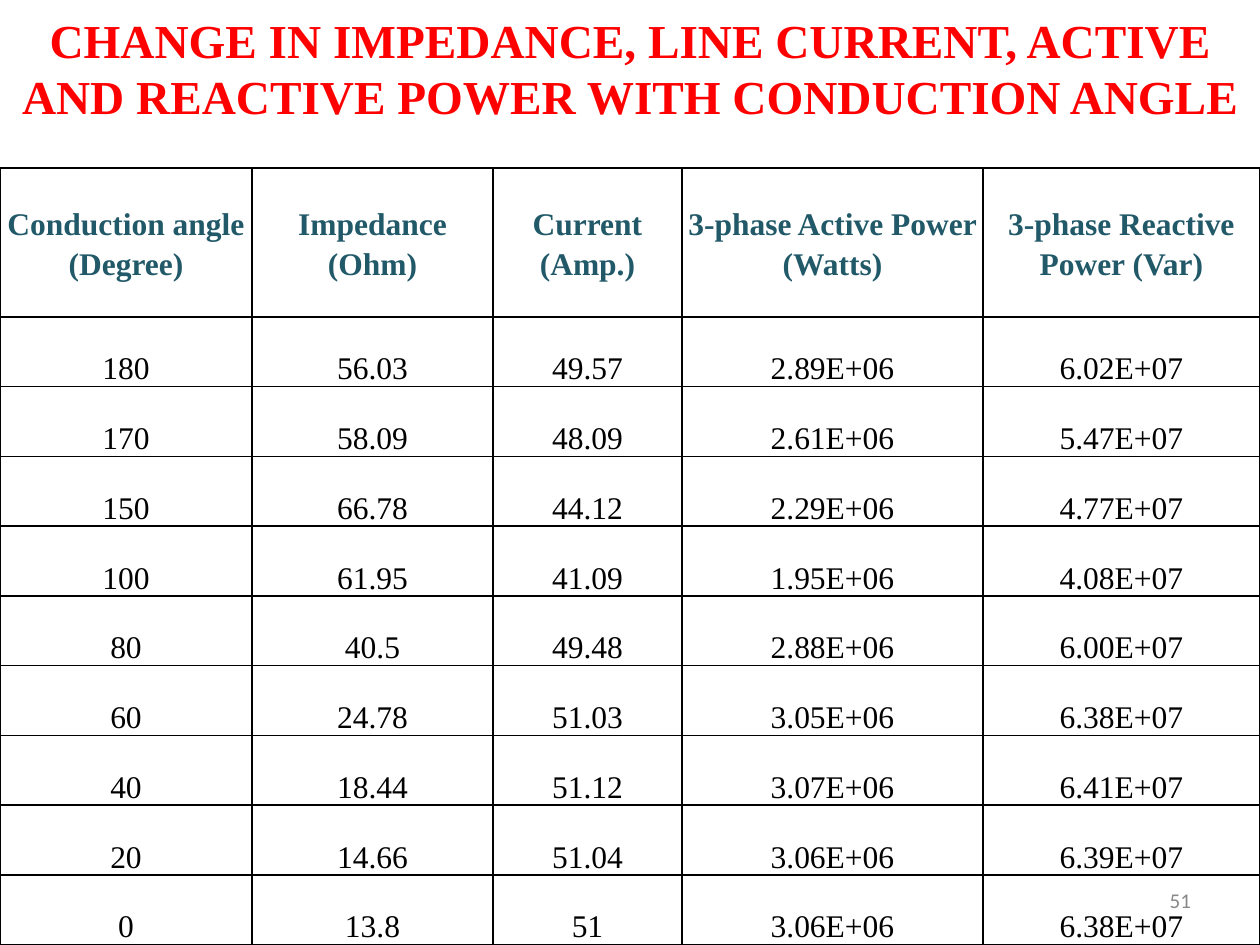
"""Build a slide tabulating impedance, current and power against conduction angle."""
from lxml import etree
from pptx import Presentation
from pptx.dml.color import RGBColor
from pptx.enum.text import MSO_ANCHOR, MSO_AUTO_SIZE, PP_ALIGN
from pptx.oxml.ns import qn
from pptx.util import Pt

CENTER, RIGHT = PP_ALIGN.CENTER, PP_ALIGN.RIGHT
MIDDLE, BOTTOM = MSO_ANCHOR.MIDDLE, MSO_ANCHOR.BOTTOM
NO_AUTOFIT, GROW = MSO_AUTO_SIZE.NONE, MSO_AUTO_SIZE.SHAPE_TO_FIT_TEXT

TITLE = "CHANGE IN IMPEDANCE, LINE CURRENT, ACTIVE AND REACTIVE POWER WITH CONDUCTION ANGLE"
PAGE_NUMBER = "51"
HEADERS = [
    "Conduction angle (Degree)",
    "Impedance (Ohm)",
    "Current (Amp.)",
    "3-phase Active Power (Watts)",
    "3-phase Reactive Power (Var)",
]
READINGS = [
    ("180", "56.03", "49.57", "2.89E+06", "6.02E+07"),
    ("170", "58.09", "48.09", "2.61E+06", "5.47E+07"),
    ("150", "66.78", "44.12", "2.29E+06", "4.77E+07"),
    ("100", "61.95", "41.09", "1.95E+06", "4.08E+07"),
    ("80", "40.5", "49.48", "2.88E+06", "6.00E+07"),
    ("60", "24.78", "51.03", "3.05E+06", "6.38E+07"),
    ("40", "18.44", "51.12", "3.07E+06", "6.41E+07"),
    ("20", "14.66", "51.04", "3.06E+06", "6.39E+07"),
    ("0", "13.8", "51", "3.06E+06", "6.38E+07"),
]
COLORS = {"title": "FF0000", "header": "215968", "body": "000000",
          "border": "000000", "page": "888888"}
SERIF, SANS = "Times New Roman", "Calibri"

SLIDE_WIDTH, SLIDE_HEIGHT = 1260, 945
TABLE_TOP = 168
COLUMN_WIDTHS = [252, 241, 189, 301, 277]
HEADER_HEIGHT = 149
INSET = 6


def px(length):
    return round(length * 914400 / 126)


def write(frame, text, size, color, font=SERIF, bold=False, align=CENTER, spacing=None):
    paragraph = frame.paragraphs[0]
    paragraph.alignment = align
    if spacing:
        paragraph.line_spacing = spacing
    run = paragraph.add_run()
    run.text = text
    run.font.size = Pt(size)
    run.font.name = font
    run.font.bold = bold
    run.font.color.rgb = RGBColor.from_string(COLORS[color])


def set_insets(target, inset):
    target.margin_left = target.margin_right = px(inset)
    target.margin_top = target.margin_bottom = px(inset)


def add_borders(cell):
    properties = cell._tc.get_or_add_tcPr()
    for side in ("lnL", "lnR", "lnT", "lnB"):
        line = etree.SubElement(properties, qn(f"a:{side}"), w=str(Pt(1)))
        fill = etree.SubElement(line, qn("a:solidFill"))
        etree.SubElement(fill, qn("a:srgbClr"), val=COLORS["border"])


def add_title(slide):
    title = slide.shapes.title
    title.left, title.top, title.width, title.height = px(0), px(-1), px(SLIDE_WIDTH), px(137)
    frame = title.text_frame
    frame.auto_size = NO_AUTOFIT
    frame.word_wrap = True
    frame.vertical_anchor = MIDDLE
    set_insets(frame, INSET)
    write(frame, TITLE, 27, "title", bold=True)


def add_readings_table(slide):
    rows = [HEADERS, *READINGS]
    table_height = SLIDE_HEIGHT - TABLE_TOP
    table = slide.shapes.add_table(len(rows), len(HEADERS), px(0), px(TABLE_TOP),
                                   px(SLIDE_WIDTH), px(table_height)).table
    table.first_row = table.horz_banding = False
    for column, width in zip(table.columns, COLUMN_WIDTHS):
        column.width = px(width)
    body_height = (table_height - HEADER_HEIGHT) / len(READINGS)
    for row_index, values in enumerate(rows):
        is_header = row_index == 0
        table.rows[row_index].height = px(HEADER_HEIGHT if is_header else body_height)
        for column_index, value in enumerate(values):
            cell = table.cell(row_index, column_index)
            set_insets(cell, 0)
            cell.vertical_anchor = MIDDLE if is_header else BOTTOM
            add_borders(cell)
            cell.fill.background()
            write(cell.text_frame, value, 18, "header" if is_header else "body",
                  bold=is_header, spacing=1.15)


def add_page_number(slide):
    frame = slide.shapes.add_textbox(px(1161), px(882), px(36), px(37)).text_frame
    frame.word_wrap = False
    frame.auto_size = GROW
    frame.vertical_anchor = MIDDLE
    set_insets(frame, INSET)
    write(frame, PAGE_NUMBER, 12, "page", font=SANS, align=RIGHT)


def main():
    presentation = Presentation()
    presentation.slide_width, presentation.slide_height = px(SLIDE_WIDTH), px(SLIDE_HEIGHT)
    slide = presentation.slides.add_slide(presentation.slide_layouts[5])
    add_title(slide)
    add_readings_table(slide)
    add_page_number(slide)
    presentation.save("out.pptx")


if __name__ == "__main__":
    main()
